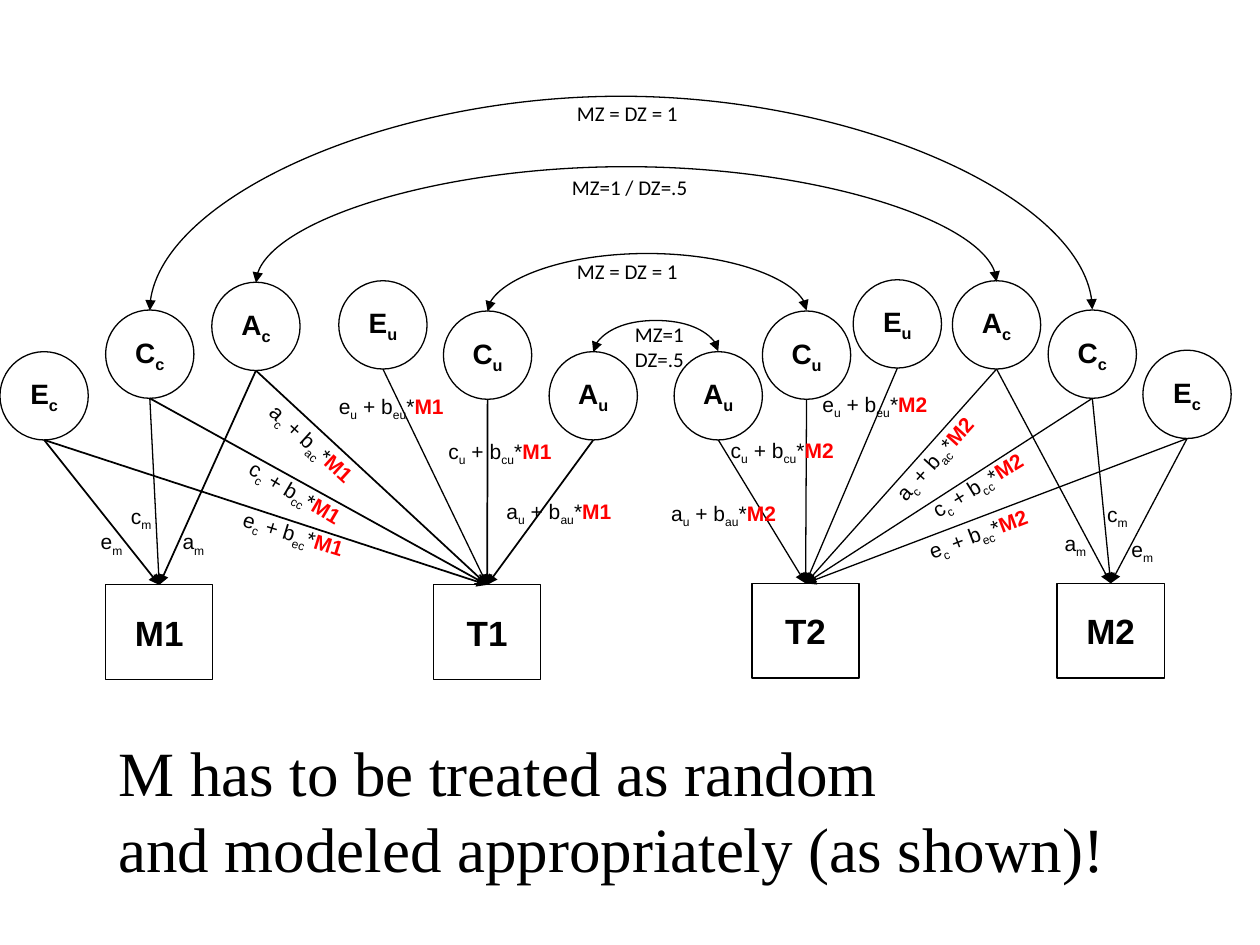
import dataclasses
import pptx
import pptx.dml.color
import pptx.enum.shapes
import pptx.enum.text
import pptx.oxml.ns
import pptx.util
from lxml import etree

Cm = pptx.util.Cm
Pt = pptx.util.Pt
RGB = pptx.dml.color.RGBColor
qn = pptx.oxml.ns.qn
Shape = pptx.enum.shapes.MSO_SHAPE
Wire = pptx.enum.shapes.MSO_CONNECTOR
Fit = pptx.enum.text.MSO_AUTO_SIZE
Anchor = pptx.enum.text.MSO_ANCHOR
Align = pptx.enum.text.PP_ALIGN


@dataclasses.dataclass
class Theme:
    ink: RGB = RGB(0, 0, 0)
    paper: RGB = RGB(255, 255, 255)
    accent: RGB = RGB(255, 0, 0)
    sans: str = "Arial"
    note: str = "Calibri"
    serif: str = "Times New Roman"
    small: int = 12
    node: int = 16
    box: int = 20
    title: int = 36
    thin: float = 0.75
    thick: float = 1


theme = Theme()


def write(par, runs, font, size, bold=False):
    for text, style in runs:
        run = par.add_run()
        run.text = text
        run.font.name = font
        run.font.size = Pt(size)
        run.font.bold = bold or style == "accent"
        run.font.color.rgb = theme.accent if style == "accent" else theme.ink
        if style == "sub":
            run.font._element.set("baseline", "-25000")


def ink(wire, width, ends):
    wire.line.color.rgb = theme.ink
    wire.line.width = Pt(width)
    props = wire._element.spPr
    line = props.find(qn("a:ln"))
    for tag, kind in ends:
        etree.SubElement(line, qn(tag), type=kind)
    etree.SubElement(props, qn("a:effectLst"))


deck = pptx.Presentation()
deck.slide_width, deck.slide_height = Cm(25.4), Cm(19.05)
slide = deck.slides.add_slide(deck.slide_layouts[5])
shapes = slide.shapes

round_d, box_w, box_h = 1.78, 2.16, 1.91
factors = {
    1: {"Ec": (0, 7.09), "Cc": (2.13, 6.25), "Ac": (4.27, 5.69),
        "Eu": (6.83, 5.66), "Cu": (8.94, 6.27), "Au": (11.07, 7.09)},
    2: {"Au": (13.59, 7.09), "Cu": (15.37, 6.27), "Eu": (17.2, 5.64),
        "Ac": (19.2, 5.66), "Cc": (21.13, 6.25), "Ec": (23.04, 7.06)},
}
boxes = {"M1": (2.13, 11.79), "T1": (8.74, 11.79),
         "T2": (15.16, 11.76), "M2": (21.31, 11.76)}

nodes = [(Shape.OVAL, x, y, round_d, round_d, theme.node,
          [(name[0], ""), (name[1], "sub")])
         for side in factors.values() for name, (x, y) in side.items()]
nodes += [(Shape.RECTANGLE, x, y, box_w, box_h, theme.box, [(name, "")])
          for name, (x, y) in boxes.items()]
for form, x, y, w, h, size, runs in nodes:
    node = shapes.add_shape(form, Cm(x), Cm(y), Cm(w), Cm(h))
    node.shadow.inherit = False
    node.fill.solid()
    node.fill.fore_color.rgb = theme.paper
    node.line.color.rgb = theme.ink
    node.line.width = Pt(theme.thin)
    frame = node.text_frame
    frame.word_wrap = False
    frame.vertical_anchor = Anchor.MIDDLE
    frame.paragraphs[0].alignment = Align.CENTER
    write(frame.paragraphs[0], runs, theme.sans, size, True)

for side, group in factors.items():
    for name, (x, y) in group.items():
        for end in "TM" if name[1] == "c" else "T":
            left, top = boxes[f"{end}{side}"]
            wire = shapes.add_connector(
                Wire.STRAIGHT, Cm(x + round_d / 2), Cm(y + round_d),
                Cm(left + box_w / 2), Cm(top))
            thin = side == 2 or (name, end) in (("Eu", "T"), ("Cc", "M"))
            head = "arrow" if (name, end, side) == ("Cc", "T", 1) else "triangle"
            ink(wire, theme.thin if thin else theme.thick, [("a:tailEnd", head)])

depth = 0.02
for name, rise in (("Au", 0.64), ("Cu", 1.17), ("Cc", 4.32), ("Ac", 2.34)):
    (x, y), (far, _) = factors[1][name], factors[2][name]
    span = far - x
    mid = x + (span + round_d) / 2
    arc = shapes.add_connector(
        Wire.CURVE, Cm(mid - depth / 2), Cm(y - span / 2),
        Cm(mid + depth / 2), Cm(y + span / 2))
    props = arc._element.spPr
    props.find(qn("a:xfrm")).set("rot", str(270 * 60000))
    guides = props.find(qn("a:prstGeom")).find(qn("a:avLst"))
    etree.SubElement(guides, qn("a:gd"), name="adj1",
                     fmla=f"val {round(rise / depth * 100000)}")
    ink(arc, theme.thin, [("a:headEnd", "triangle"), ("a:tailEnd", "triangle")])

paths = [
    ("a", "u", 1, 9.96, 9.93, 0), ("a", "c", 1, 4.98, 8.59, 42.4),
    ("c", "c", 1, 4.67, 9.58, 30.6), ("e", "c", 1, 4.62, 10.39, 17.1),
    ("c", "u", 1, 8.79, 8.71, 0), ("e", "u", 1, 6.58, 7.8, 0),
    ("e", "u", 2, 16.33, 7.77, 0), ("c", "u", 2, 14.48, 8.69, 0),
    ("a", "u", 2, 13.28, 9.96, 0), ("e", "c", 2, 18.42, 10.36, 339.2),
    ("c", "c", 2, 18.42, 9.37, 328.4), ("a", "c", 2, 17.53, 8.84, 312.1),
    ("a", "m", 1, 3.43, 10.54, 0), ("c", "m", 1, 2.39, 10.03, 0),
    ("e", "m", 1, 1.78, 10.54, 0), ("a", "m", 2, 21.21, 10.57, 0),
    ("e", "m", 2, 22.56, 10.69, 0), ("c", "m", 2, 22.07, 9.98, 0),
]
labels = []
for path, kind, side, x, y, turn in paths:
    runs = [(path, ""), (kind, "sub")]
    if kind != "m":
        runs += [(" + b", ""), (path + kind, "sub"), ("*", ""),
                 (f"M{side}", "accent")]
    width = 0.99 if kind == "m" else 2.67
    labels.append((x, y, width, 0.76, turn, theme.sans, [runs]))
for x, y, w, h, lines in (
        (11.28, 3.4, 2.84, 0.76, ["MZ=1 / DZ=.5"]),
        (12.55, 6.35, 1.6, 1.27, ["MZ=1", "DZ=.5"]),
        (11.38, 1.91, 2.57, 0.76, ["MZ = DZ = 1"]),
        (11.38, 5.08, 2.57, 0.76, ["MZ = DZ = 1"])):
    labels.append((x, y, w, h, 0, theme.note, [[(line, "")] for line in lines]))

for x, y, w, h, turn, font, lines in labels:
    label = shapes.add_textbox(Cm(x), Cm(y), Cm(w), Cm(h))
    label.rotation = turn
    frame = label.text_frame
    frame.word_wrap = False
    frame.auto_size = Fit.SHAPE_TO_FIT_TEXT
    for i, runs in enumerate(lines):
        par = frame.add_paragraph() if i else frame.paragraphs[0]
        write(par, runs, font, theme.small)

title = shapes.title
title.left, title.top = Cm(2.13), Cm(14.66)
title.width, title.height = Cm(20.6), Cm(3.33)
frame = title.text_frame
frame.word_wrap = False
frame.auto_size = Fit.NONE
frame.vertical_anchor = Anchor.TOP
for i, line in enumerate(("M has to be treated as random",
                          "and modeled appropriately (as shown)!")):
    par = frame.add_paragraph() if i else frame.paragraphs[0]
    par.alignment = Align.LEFT
    write(par, [(line, "")], theme.serif, theme.title)

deck.save("out.pptx")
